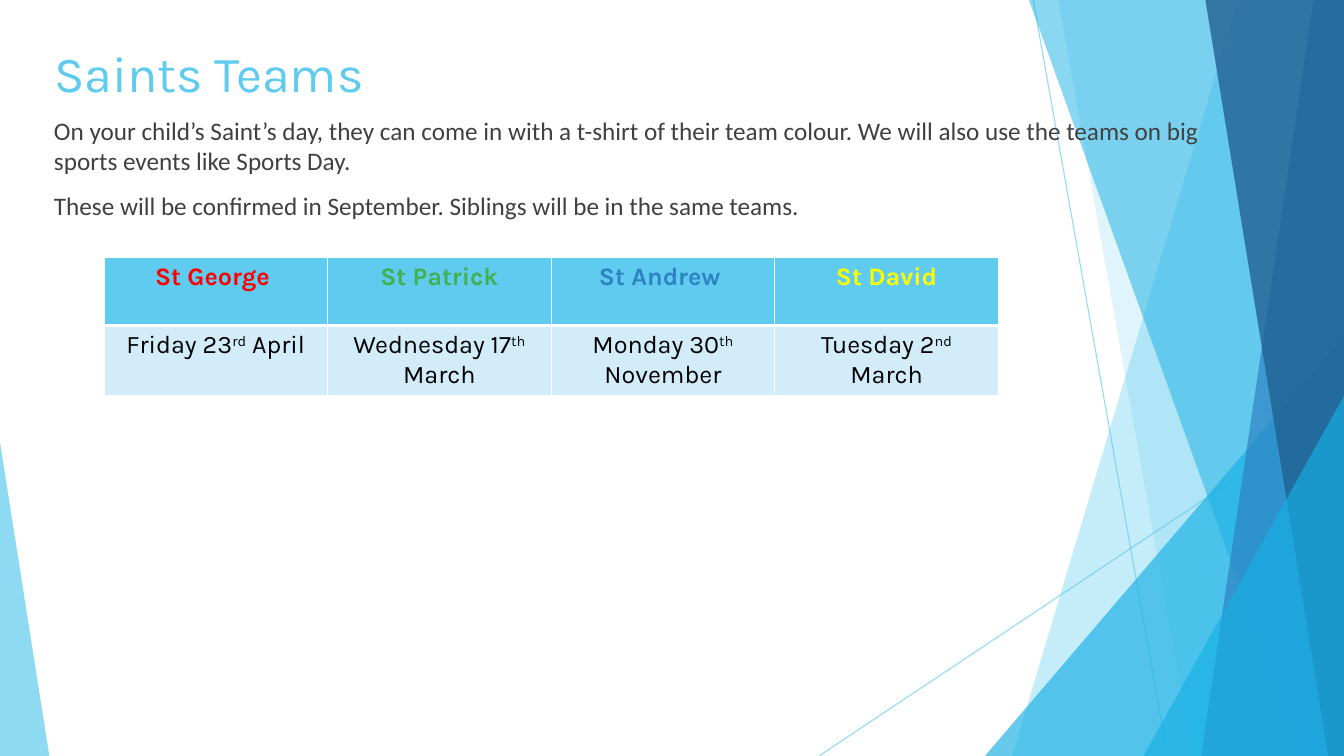
import dataclasses

import lxml.etree
import pptx
import pptx.dml.color
import pptx.enum.shapes
import pptx.enum.text
import pptx.oxml
import pptx.oxml.ns
import pptx.util

EMU_PER_PX = 9525
WIDTH, HEIGHT = 1280, 720


@dataclasses.dataclass(frozen=True)
class Theme:
    sky: str = "5FCBEF"
    cyan: str = "17B0E4"
    blue: str = "2E83C3"
    navy: str = "226292"
    pale: str = "D2ECF9"
    white: str = "FFFFFF"
    black: str = "000000"
    grey: str = "404040"
    red: str = "FF0000"
    green: str = "42B051"
    yellow: str = "FFFF00"
    heading_font: str = "Karla"
    body_font: str = "Calibri"
    title_size: int = 36
    text_size: int = 18


THEME = Theme()

TEAMS = [
    ("St George ", THEME.red, "Friday 23", "rd", " April"),
    ("St Patrick", THEME.green, "Wednesday 17", "th", " March"),
    ("St Andrew ", THEME.blue, "Monday 30", "th", " November"),
    ("St David", THEME.yellow, "Tuesday 2", "nd", " March"),
]


def px(*lengths):
    return [pptx.util.Emu(length * EMU_PER_PX) for length in lengths]


def rgb(color):
    return pptx.dml.color.RGBColor.from_string(color)


def set_opacity(properties, percent):
    color = properties.find(".//" + pptx.oxml.ns.qn("a:srgbClr"))
    alpha = lxml.etree.SubElement(color, pptx.oxml.ns.qn("a:alpha"))
    alpha.set("val", str(percent * 1000))


def paint(shape, color, opacity):
    shape.shadow.inherit = False
    shape.fill.solid()
    shape.fill.fore_color.rgb = rgb(color)
    shape.line.fill.background()
    set_opacity(shape.fill._xPr, opacity)


def add_line(slide, *ends):
    line = slide.shapes.add_connector(
        pptx.enum.shapes.MSO_CONNECTOR.STRAIGHT, *px(*ends))
    line.line.color.rgb = rgb(THEME.sky)
    line.line.width = pptx.util.Pt(0.75)
    properties = line._element.spPr
    set_opacity(properties, 70)
    lxml.etree.SubElement(properties, pptx.oxml.ns.qn("a:effectLst"))


def add_pane(slide, top_x, bottom_x, color, opacity):
    builder = slide.shapes.build_freeform(top_x, 0, scale=EMU_PER_PX)
    builder.add_line_segments([(WIDTH, 0), (WIDTH, HEIGHT), (bottom_x, HEIGHT)])
    paint(builder.convert_to_shape(), color, opacity)


def add_corner(slide, left, top, width, apex, color, opacity):
    triangle = slide.shapes.add_shape(
        pptx.enum.shapes.MSO_SHAPE.ISOSCELES_TRIANGLE,
        *px(left, top, width, HEIGHT - top))
    triangle.adjustments[0] = apex
    paint(triangle, color, opacity)


def write(paragraph, text, *, font=THEME.heading_font, size=THEME.text_size,
          color=THEME.black, bold=False, raised=False, centered=False):
    run = paragraph.add_run()
    run.text = text
    run.font.name = font
    run.font.size = pptx.util.Pt(size)
    run.font.color.rgb = rgb(color)
    run.font.bold = bold
    if raised:
        run.font._element.set("baseline", "30000")
    if centered:
        paragraph.alignment = pptx.enum.text.PP_ALIGN.CENTER


def add_text_box(slide, bounds, paragraphs, *, margin_top=5, **text_format):
    frame = slide.shapes.add_textbox(*px(*bounds)).text_frame
    frame.word_wrap = True
    frame.margin_top, = px(margin_top)
    for index, text in enumerate(paragraphs):
        paragraph = frame.add_paragraph() if index else frame.paragraphs[0]
        if index:
            paragraph.space_before = pptx.util.Pt(10)
        write(paragraph, text, **text_format)


def style_cell(cell, color, top=1, bottom=1):
    cell.fill.solid()
    cell.fill.fore_color.rgb = rgb(color)
    properties = cell._tc.get_or_add_tcPr()
    borders = {"lnL": 1, "lnR": 1, "lnT": top, "lnB": bottom}
    for index, (side, points) in enumerate(borders.items()):
        properties.insert(index, pptx.oxml.parse_xml(
            f'<a:{side} {pptx.oxml.ns.nsdecls("a")} w="{pptx.util.Pt(points)}">'
            f'<a:solidFill><a:srgbClr val="{THEME.white}"/></a:solidFill>'
            f'</a:{side}>'))


def add_team_table(slide, left, top, column_width, row_height):
    bounds = px(left, top, column_width * len(TEAMS), row_height * 2)
    table = slide.shapes.add_table(2, len(TEAMS), *bounds).table
    for row in table.rows:
        row.height, = px(row_height)
    for index, (team, color, day, ordinal, month) in enumerate(TEAMS):
        table.columns[index].width, = px(column_width)
        name_cell, date_cell = table.cell(0, index), table.cell(1, index)
        style_cell(name_cell, THEME.sky, bottom=3)
        style_cell(date_cell, THEME.pale, top=3)
        write(name_cell.text_frame.paragraphs[0], team,
              color=color, bold=True, centered=True)
        date = date_cell.text_frame.paragraphs[0]
        write(date, day, centered=True)
        write(date, ordinal, raised=True)
        write(date, month)


def add_backdrop(slide):
    add_line(slide, 984, 0, 1112, HEIGHT)
    add_line(slide, WIDTH, 387, 780, HEIGHT)
    add_pane(slide, 1179, 964, THEME.sky, 36)
    add_pane(slide, 1008, 1136, THEME.sky, 20)
    add_corner(slide, 938, 320, 342, 1, THEME.cyan, 66)
    add_pane(slide, 980, 1239, THEME.cyan, 50)
    add_pane(slide, 1251, 1144, THEME.blue, 70)
    add_pane(slide, 1148, 1265, THEME.navy, 80)
    add_corner(slide, 1089, 377, 191, 1, THEME.cyan, 66)
    add_corner(slide, 0, 421, 47, 0, THEME.sky, 70)


def main():
    presentation = pptx.Presentation()
    presentation.slide_width, presentation.slide_height = px(WIDTH, HEIGHT)
    slide = presentation.slides.add_slide(presentation.slide_layouts[6])
    add_backdrop(slide)
    add_text_box(slide, (42, 30, 902, 83), ["Saints Teams"], margin_top=10,
                 size=THEME.title_size, color=THEME.sky)
    add_text_box(slide, (42, 105, 1139, 407), [
        "On your child’s Saint’s day, they can come in with a t-shirt of their "
        "team colour. We will also use the teams on big sports events like "
        "Sports Day.",
        "These will be confirmed in September. Siblings will be in the same "
        "teams.",
    ], font=THEME.body_font, color=THEME.grey)
    add_team_table(slide, 99, 245, 213, 65)
    presentation.save("out.pptx")


if __name__ == "__main__":
    main()
